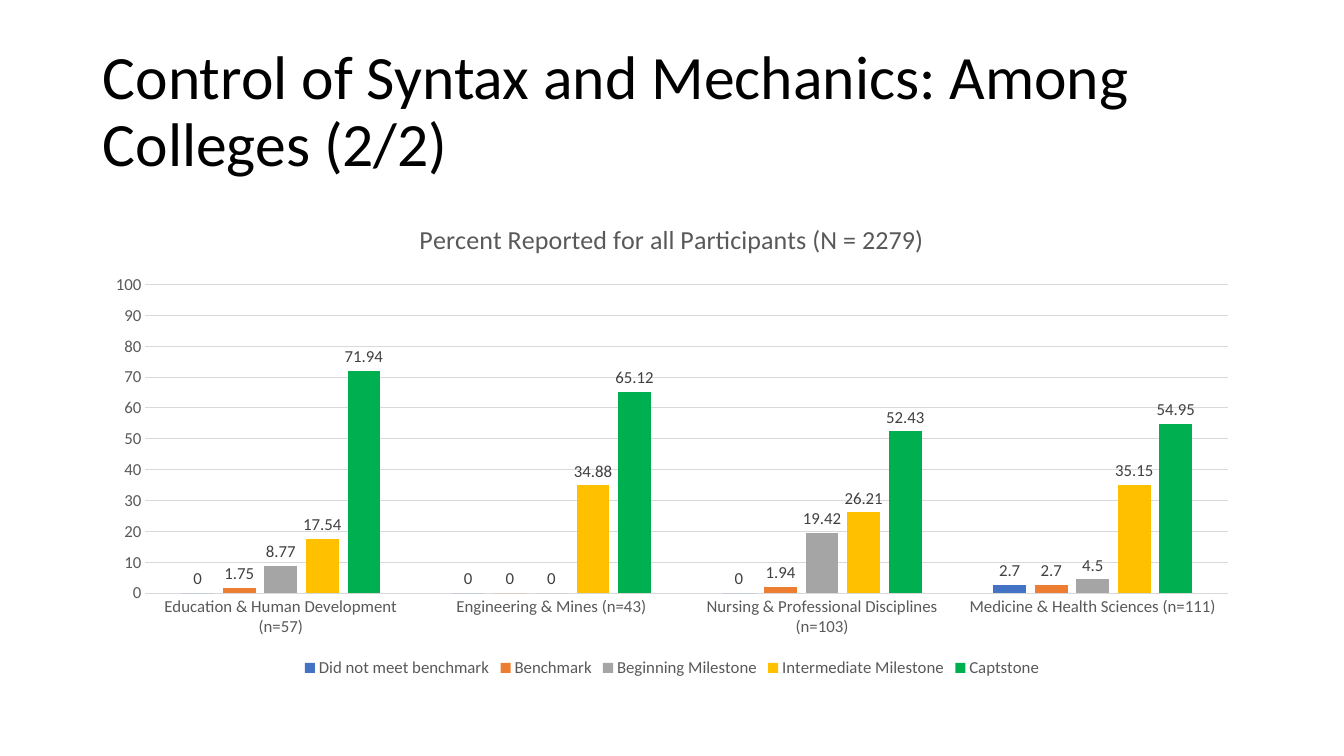
from pptx import Presentation
from pptx.chart.data import CategoryChartData
from pptx.dml.color import RGBColor
from pptx.enum.chart import (
    XL_CHART_TYPE as ChartType,
    XL_LABEL_POSITION as LabelPosition,
    XL_LEGEND_POSITION as LegendPosition,
    XL_TICK_MARK as TickMark,
)
from pptx.enum.text import MSO_ANCHOR, PP_ALIGN
from pptx.util import Inches, Pt

WIDTH, HEIGHT = Inches(13.33), Inches(7.5)
FONT = "Calibri"
BLACK, TEXT_GRAY, LABEL_GRAY, LINE_GRAY = "000000", "595959", "404040", "D9D9D9"

COLLEGES = [
    "Education & Human Development (n=57)",
    "Engineering & Mines (n=43)",
    "Nursing & Professional Disciplines (n=103)",
    "Medicine & Health Sciences (n=111)",
]
LEVELS = [
    ("Did not meet benchmark", "4472C4", (0, 0, 0, 2.7)),
    ("Benchmark", "ED7D31", (1.75, 0, 1.94, 2.7)),
    ("Beginning Milestone", "A5A5A5", (8.77, 0, 19.42, 4.5)),
    ("Intermediate Milestone", "FFC000", (17.54, 34.88, 26.21, 35.15)),
    ("Captstone", "00B050", (71.94, 65.12, 52.43, 54.95)),
]


def rgb(code):
    return RGBColor.from_string(code)


def set_attributes(target, values):
    for name, value in values.items():
        setattr(target, name, value)


def format_font(font, size, color):
    set_attributes(font, {"name": FONT, "size": Pt(size), "bold": False})
    font.color.rgb = rgb(color)


def format_line(line, color):
    line.color.rgb = rgb(color)
    line.width = Pt(0.75)


def share_box(left, top, width, height):
    """Turn shares of the slide into a box of lengths."""
    return (int(WIDTH * left), int(HEIGHT * top),
            int(WIDTH * width), int(HEIGHT * height))


def place_heading(heading, box, text):
    set_attributes(heading, dict(zip(("left", "top", "width", "height"), box)))
    frame = heading.text_frame
    set_attributes(frame, {"text": text, "word_wrap": True,
                           "vertical_anchor": MSO_ANCHOR.MIDDLE})
    paragraph = frame.paragraphs[0]
    set_attributes(paragraph, {"alignment": PP_ALIGN.LEFT, "line_spacing": 0.9})
    format_font(paragraph.runs[0].font, 44, BLACK)


def format_axes(chart):
    for axis in (chart.category_axis, chart.value_axis):
        set_attributes(axis, {"major_tick_mark": TickMark.NONE,
                              "minor_tick_mark": TickMark.NONE})
        format_font(axis.tick_labels.font, 12, TEXT_GRAY)
    format_line(chart.category_axis.format.line, LINE_GRAY)
    percent = chart.value_axis
    set_attributes(percent, {"minimum_scale": 0, "maximum_scale": 100,
                             "major_unit": 10, "has_major_gridlines": True})
    percent.format.line.fill.background()
    format_line(percent.major_gridlines.format.line, LINE_GRAY)


def format_levels(plot):
    set_attributes(plot, {"gap_width": 219, "overlap": -27,
                          "vary_by_categories": False})
    for level, (_, color, _) in zip(plot.series, LEVELS):
        level.invert_if_negative = False
        level.format.fill.solid()
        level.format.fill.fore_color.rgb = rgb(color)
        labels = level.data_labels
        set_attributes(labels, {"show_value": True,
                                "position": LabelPosition.OUTSIDE_END})
        format_font(labels.font, 12, LABEL_GRAY)


def place_college_chart(slide, box, caption):
    data = CategoryChartData()
    data.categories = COLLEGES
    for name, _, values in LEVELS:
        data.add_series(name, values)
    chart = slide.shapes.add_chart(ChartType.COLUMN_CLUSTERED, *box, data).chart
    format_font(chart.font, 10, BLACK)

    # Caption and legend
    chart.has_title = True
    chart.chart_title.include_in_layout = False
    frame = chart.chart_title.text_frame
    frame.text = caption
    format_font(frame.paragraphs[0].runs[0].font, 18.6, TEXT_GRAY)
    chart.has_legend = True
    set_attributes(chart.legend, {"position": LegendPosition.BOTTOM,
                                  "include_in_layout": False})
    format_font(chart.legend.font, 12, TEXT_GRAY)

    format_axes(chart)
    format_levels(chart.plots[0])


def main():
    deck = Presentation()
    set_attributes(deck, {"slide_width": WIDTH, "slide_height": HEIGHT})
    slide = deck.slides.add_slide(deck.slide_layouts.get_by_name("Title Only"))
    margin = 0.069
    content = 1 - 2 * margin
    place_heading(slide.shapes.title, share_box(margin, 0.053, content, 0.193),
                  "Control of Syntax and Mechanics: Among Colleges (2/2)")
    place_college_chart(slide, share_box(margin, 0.267, content, 0.635),
                        "Percent Reported for all Participants (N = 2279)")
    deck.save("out.pptx")


if __name__ == "__main__":
    main()
